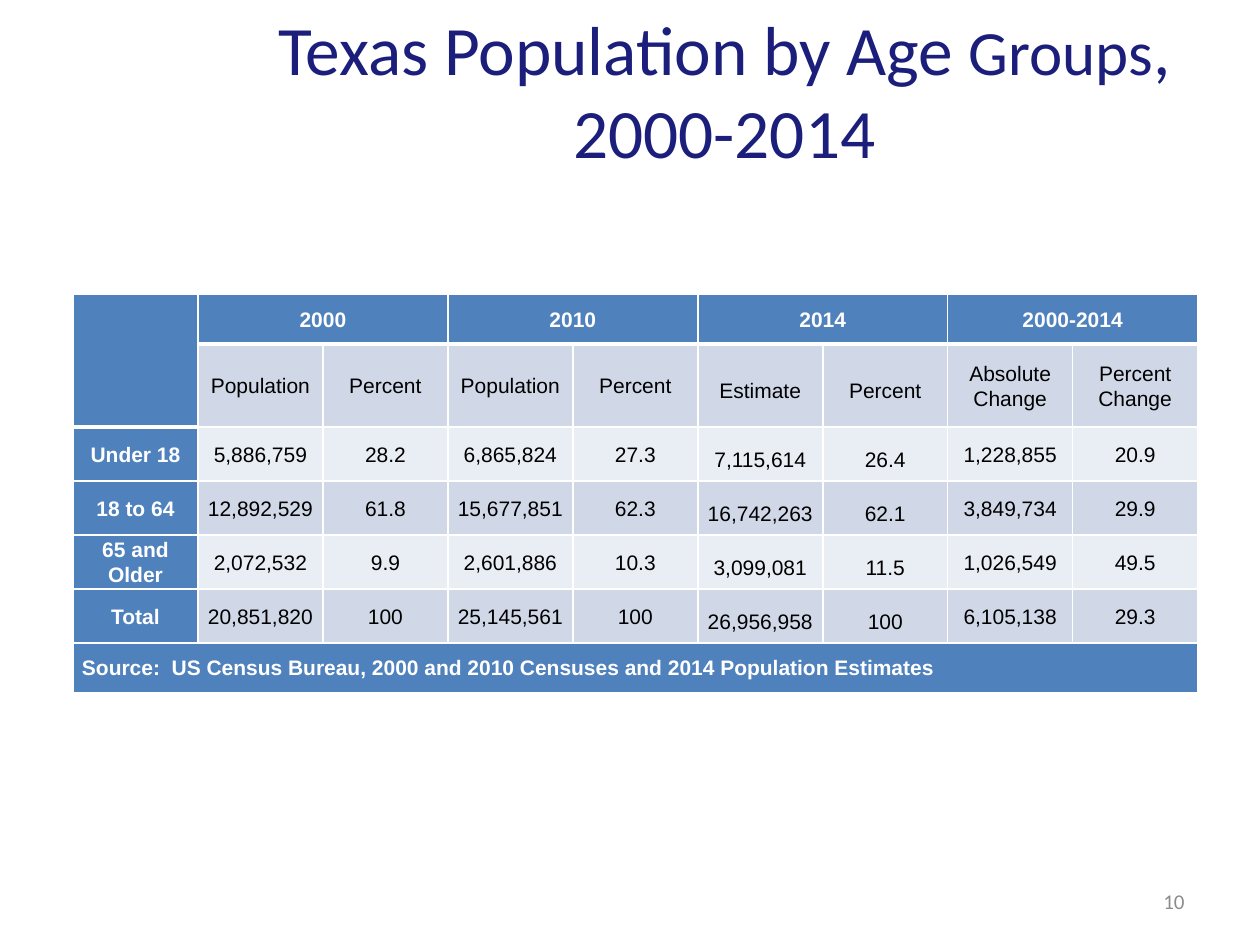
from dataclasses import dataclass

from lxml import etree
from pptx import Presentation
from pptx.dml.color import RGBColor
from pptx.enum.text import MSO_ANCHOR, MSO_AUTO_SIZE, PP_ALIGN
from pptx.oxml.ns import qn
from pptx.util import Emu, Pt

CENTER, LEFT, RIGHT = PP_ALIGN.CENTER, PP_ALIGN.LEFT, PP_ALIGN.RIGHT
MIDDLE = MSO_ANCHOR.MIDDLE
NO_AUTOFIT = MSO_AUTO_SIZE.NONE

PIXELS_PER_INCH = 126
TITLE_ONLY_LAYOUT = 5
NAVY, GRAY, WHITE, BLACK = "1B1E7A", "8C8C8C", "FFFFFF", "000000"
BLUE, DARK_BAND, LIGHT_BAND = "4F81BD", "D0D8E8", "E9EDF4"

COLUMN_WIDTH = 125
ROW_HEIGHTS = [50, 83, 54, 54, 54, 54, 50]
SOURCE_ROW = len(ROW_HEIGHTS) - 1
ESTIMATE_COLUMNS = (5, 6)
CHANGE_COLUMNS = (7, 8)
ROWS = [
    ["", "2000", "", "2010", "", "2014", "", "2000-2014", ""],
    ["", "Population", "Percent", "Population", "Percent", "Estimate", "Percent",
     "Absolute Change", "Percent Change"],
    ["Under 18", "5,886,759", "28.2", "6,865,824", "27.3", "7,115,614", "26.4",
     "1,228,855", "20.9"],
    ["18 to 64", "12,892,529", "61.8", "15,677,851", "62.3", "16,742,263", "62.1",
     "3,849,734", "29.9"],
    ["65 and Older", "2,072,532", "9.9", "2,601,886", "10.3", "3,099,081", "11.5",
     "1,026,549", "49.5"],
    ["Total", "20,851,820", "100", "25,145,561", "100", "26,956,958", "100",
     "6,105,138", "29.3"],
    ["Source:  US Census Bureau, 2000 and 2010 Censuses and 2014 Population Estimates"]
    + [""] * 8,
]


@dataclass(frozen=True)
class Box:
    left: int
    top: int
    width: int
    height: int

    def emu(self) -> tuple:
        return tuple(px(value) for value in (self.left, self.top, self.width, self.height))


@dataclass(frozen=True)
class CellStyle:
    fill: str
    color: str
    bold: bool
    align: PP_ALIGN
    line_spacing: float
    space_after: int


def px(value: int) -> Emu:
    return Emu(round(value * 914400 / PIXELS_PER_INCH))


def rgb(color: str) -> RGBColor:
    return RGBColor.from_string(color)


def format_run(run, font: str, size: float, color: str, bold: bool = False) -> None:
    run.font.name = font
    run.font.size = Pt(size)
    run.font.color.rgb = rgb(color)
    run.font.bold = bold


def draw_title(slide, box: Box) -> None:
    title = slide.shapes.title
    title.left, title.top, title.width, title.height = box.emu()
    title.text_frame.auto_size = NO_AUTOFIT
    title.text_frame.vertical_anchor = MIDDLE
    paragraph = title.text_frame.paragraphs[0]
    paragraph.alignment = CENTER
    for text, size in (("Texas Population by Age ", 39.6), ("Groups", 36), (", 2000-2014", 39.6)):
        run = paragraph.add_run()
        run.text = text
        format_run(run, "Calibri", size, NAVY)


def draw_slide_number(slide, box: Box, number: str) -> None:
    frame = slide.shapes.add_textbox(*box.emu()).text_frame
    frame.word_wrap = True
    frame.vertical_anchor = MIDDLE
    frame.text = number
    paragraph = frame.paragraphs[0]
    paragraph.alignment = RIGHT
    format_run(paragraph.runs[0], "Calibri", 12, GRAY)


def cell_style(row: int, column: int) -> CellStyle:
    heading = row in (0, SOURCE_ROW) or column == 0
    band = DARK_BAND if row % 2 else LIGHT_BAND
    estimate = column in ESTIMATE_COLUMNS and not heading
    change = column in CHANGE_COLUMNS and not heading and row > 1
    return CellStyle(
        fill=BLUE if heading else band,
        color=WHITE if heading else BLACK,
        bold=heading,
        align=LEFT if row == SOURCE_ROW else CENTER,
        line_spacing=1.5 if estimate else 1.07,
        space_after=8 if change else 0,
    )


def set_borders(cell, row: int, column: int) -> None:
    header_end = 1 if column == 0 else 0
    widths = {
        "a:lnL": 1,
        "a:lnR": 1,
        "a:lnT": 3 if row == header_end + 1 else 1,
        "a:lnB": 3 if row <= header_end else 1,
    }
    properties = cell._tc.get_or_add_tcPr()
    for index, (tag, width) in enumerate(widths.items()):
        line = etree.Element(qn(tag), w=str(Pt(width)))
        fill = etree.SubElement(line, qn("a:solidFill"))
        etree.SubElement(fill, qn("a:srgbClr"), val=WHITE)
        properties.insert(index, line)


def fill_cell(cell, text: str, style: CellStyle) -> None:
    cell.fill.solid()
    cell.fill.fore_color.rgb = rgb(style.fill)
    cell.vertical_anchor = MIDDLE
    cell.margin_left = cell.margin_right = px(9)
    cell.margin_top = cell.margin_bottom = 0
    cell.text_frame.text = text
    paragraph = cell.text_frame.paragraphs[0]
    paragraph.alignment = style.align
    paragraph.line_spacing = style.line_spacing
    paragraph.space_after = Pt(style.space_after)
    for run in paragraph.runs:
        format_run(run, "Arial", 12, style.color, style.bold)


def draw_table(slide, left: int, top: int) -> None:
    column_count = len(ROWS[0])
    box = Box(left, top, COLUMN_WIDTH * column_count, sum(ROW_HEIGHTS))
    table = slide.shapes.add_table(len(ROWS), column_count, *box.emu()).table
    for column in table.columns:
        column.width = px(COLUMN_WIDTH)
    for row, height in zip(table.rows, ROW_HEIGHTS):
        row.height = px(height)
    table.cell(0, 0).merge(table.cell(1, 0))
    for column in range(1, column_count, 2):
        table.cell(0, column).merge(table.cell(0, column + 1))
    table.cell(SOURCE_ROW, 0).merge(table.cell(SOURCE_ROW, column_count - 1))
    for row, texts in enumerate(ROWS):
        for column, text in enumerate(texts):
            cell = table.cell(row, column)
            fill_cell(cell, text, cell_style(row, column))
            set_borders(cell, row, column)


def main() -> None:
    """Build the Texas population slide."""
    presentation = Presentation()
    presentation.slide_width, presentation.slide_height = px(1260), px(945)
    slide = presentation.slides.add_slide(presentation.slide_layouts[TITLE_ONLY_LAYOUT])
    draw_title(slide, Box(252, 21, 945, 136))
    draw_slide_number(slide, Box(903, 876, 294, 50), "10")
    draw_table(slide, 73, 294)
    presentation.save("out.pptx")


if __name__ == "__main__":
    main()
